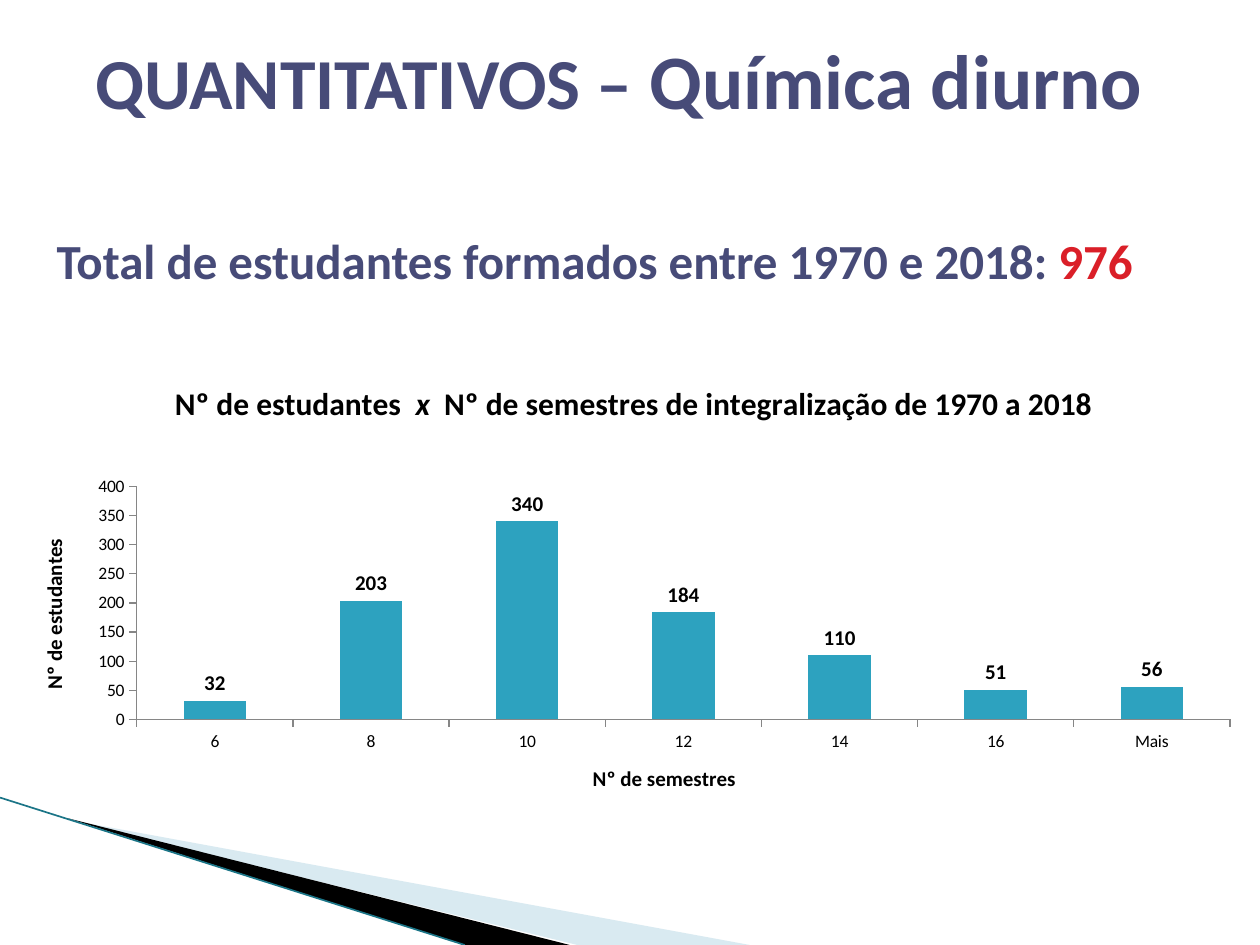
import pptx
import pptx.chart.data
import pptx.dml.color
import pptx.enum.chart
import pptx.enum.text
import pptx.oxml
import pptx.oxml.ns
import pptx.util
from lxml import etree

RGBColor = pptx.dml.color.RGBColor
INDIGO = RGBColor(0x47, 0x4B, 0x78)
RED = RGBColor(0xDA, 0x1F, 0x28)
TEAL = RGBColor(0x2D, 0xA2, 0xBF)
DARK_TEAL = RGBColor(0x1B, 0x75, 0x87)
PALE_BLUE = RGBColor(0xA0, 0xCB, 0xDC)
GREY = RGBColor(0x86, 0x86, 0x86)
BLACK = RGBColor(0, 0, 0)
FONT = "Calibri"
WIDTH = pptx.util.Inches(10)
HEIGHT = pptx.util.Inches(7.5)
GRADUATES = {"6": 32, "8": 203, "10": 340, "12": 184, "14": 110, "16": 51, "Mais": 56}


def area(left, top, width, height):
    """Return a box in EMU from shares of the slide's size."""
    return (int(left * WIDTH), int(top * HEIGHT), int(width * WIDTH), int(height * HEIGHT))


def style(font, size, color, bold=True):
    """Apply the deck's typeface with a size, colour and weight."""
    font.name = FONT
    font.size = pptx.util.Pt(size)
    font.bold = bold
    font.color.rgb = color


def add_wedge(slide, box, corners, color, opacity=100):
    """Draw a filled polygon whose corners are shares of the box."""
    left, top, width, height = box
    points = [(left + x * width, top + y * height) for x, y in corners]
    builder = slide.shapes.build_freeform(*points[0], scale=1.0)
    builder.add_line_segments(points[1:], close=True)
    wedge = builder.convert_to_shape()
    wedge.shadow.inherit = False
    wedge.fill.solid()
    wedge.fill.fore_color.rgb = color
    wedge.line.fill.background()
    if opacity < 100:
        tint = wedge.fill._xPr.find(".//" + pptx.oxml.ns.qn("a:srgbClr"))
        etree.SubElement(tint, pptx.oxml.ns.qn("a:alpha")).set("val", str(opacity * 1000))


def add_corner_swoosh(slide, box):
    """Draw the two wedges and the edge line at the bottom left."""
    left, top, width, height = box
    add_wedge(slide, box, [(0.09, 0.15), (1, 1), (0.77, 1)], PALE_BLUE, 40)
    add_wedge(slide, box, [(0.09, 0.14), (0.76, 1), (0.62, 1)], BLACK)
    edge = slide.shapes.add_connector(1, left, top, left + int(0.62 * width), top + height)
    edge.line.color.rgb = DARK_TEAL
    edge.line.width = pptx.util.Pt(0.95)
    etree.SubElement(edge._element.spPr, pptx.oxml.ns.qn("a:effectLst"))


def add_heading(slide, box):
    """Place and format the slide title."""
    heading = slide.shapes.title
    heading.left, heading.top, heading.width, heading.height = box
    frame = heading.text_frame
    frame.vertical_anchor = pptx.enum.text.MSO_ANCHOR.MIDDLE
    paragraph = frame.paragraphs[0]
    paragraph.alignment = pptx.enum.text.PP_ALIGN.CENTER
    for words, size in (("QUANTITATIVOS – ", 41), ("Química diurno", 44)):
        run = paragraph.add_run()
        run.text = words
        style(run.font, size, INDIGO)


def add_total(slide, box):
    """Write the total number of graduates."""
    frame = slide.shapes.add_textbox(*box).text_frame
    frame.word_wrap = True
    paragraph = frame.paragraphs[0]
    for words, color in (("Total de estudantes formados entre 1970 e 2018: ", INDIGO), ("976", RED)):
        run = paragraph.add_run()
        run.text = words
        style(run.font, 28, color)


def format_axis(axis, caption):
    """Give an axis its caption, outer ticks and grey line."""
    axis.has_major_gridlines = False
    axis.major_tick_mark = pptx.enum.chart.XL_TICK_MARK.OUTSIDE
    axis.format.line.color.rgb = GREY
    style(axis.tick_labels.font, 10, BLACK, bold=False)
    paragraph = axis.axis_title.text_frame.paragraphs[0]
    paragraph.text = caption
    style(paragraph.font, 12, BLACK)


def set_plot_layout(chart, **shares):
    """Fix the inner plot area as shares of the chart."""
    plot_area = chart._chartSpace.chart.plotArea
    for old in plot_area.findall(pptx.oxml.ns.qn("c:layout")):
        plot_area.remove(old)
    settings = {"layoutTarget": "inner", "xMode": "edge", "yMode": "edge", **shares}
    layout = etree.Element(pptx.oxml.ns.qn("c:layout"))
    manual = etree.SubElement(layout, pptx.oxml.ns.qn("c:manualLayout"))
    for tag, value in settings.items():
        etree.SubElement(manual, pptx.oxml.ns.qn("c:" + tag)).set("val", str(value))
    plot_area.insert(0, layout)


def add_semester_chart(slide, box):
    """Chart the graduates by number of semesters taken."""
    data = pptx.chart.data.CategoryChartData()
    data.categories = list(GRADUATES)
    data.add_series("Series 1", list(GRADUATES.values()))
    kind = pptx.enum.chart.XL_CHART_TYPE.COLUMN_CLUSTERED
    chart = slide.shapes.add_chart(kind, *box, data).chart
    style(chart.font, 10, BLACK, bold=False)
    chart.has_legend = False
    caption = chart.chart_title.text_frame.paragraphs[0]
    for words in ("Nº de estudantes  ", "x", "  Nº de semestres de integralização de 1970 a 2018"):
        run = caption.add_run()
        run.text = words
        run.font.italic = words == "x"
        style(run.font, 18, BLACK)
    format_axis(chart.category_axis, "Nº de semestres")
    format_axis(chart.value_axis, "Nº de estudantes")
    chart.value_axis.minimum_scale = 0
    chart.value_axis.maximum_scale = 400
    chart.value_axis.major_unit = 50
    plot = chart.plots[0]
    plot.gap_width = 150
    plot.vary_by_categories = False
    bars = plot.series[0]
    bars.format.fill.solid()
    bars.format.fill.fore_color.rgb = TEAL
    labels = bars.data_labels
    labels.show_value = True
    labels.position = pptx.enum.chart.XL_LABEL_POSITION.OUTSIDE_END
    style(labels.font, 12, BLACK)
    set_plot_layout(chart, x=0.1, y=0.27, w=0.88, h=0.51)


def main():
    """Build the slide and save it."""
    deck = pptx.Presentation()
    deck.slide_width, deck.slide_height = WIDTH, HEIGHT
    slide = deck.slides.add_slide(deck.slide_layouts[5])
    add_corner_swoosh(slide, area(0, 0.844, 0.595, 0.156))
    add_heading(slide, area(0.002, 0, 0.979, 0.167))
    add_total(slide, area(0.035, 0.237, 0.921, 0.076))
    add_semester_chart(slide, area(0.01, 0.384, 0.986, 0.484))
    deck.save("out.pptx")


if __name__ == "__main__":
    main()
